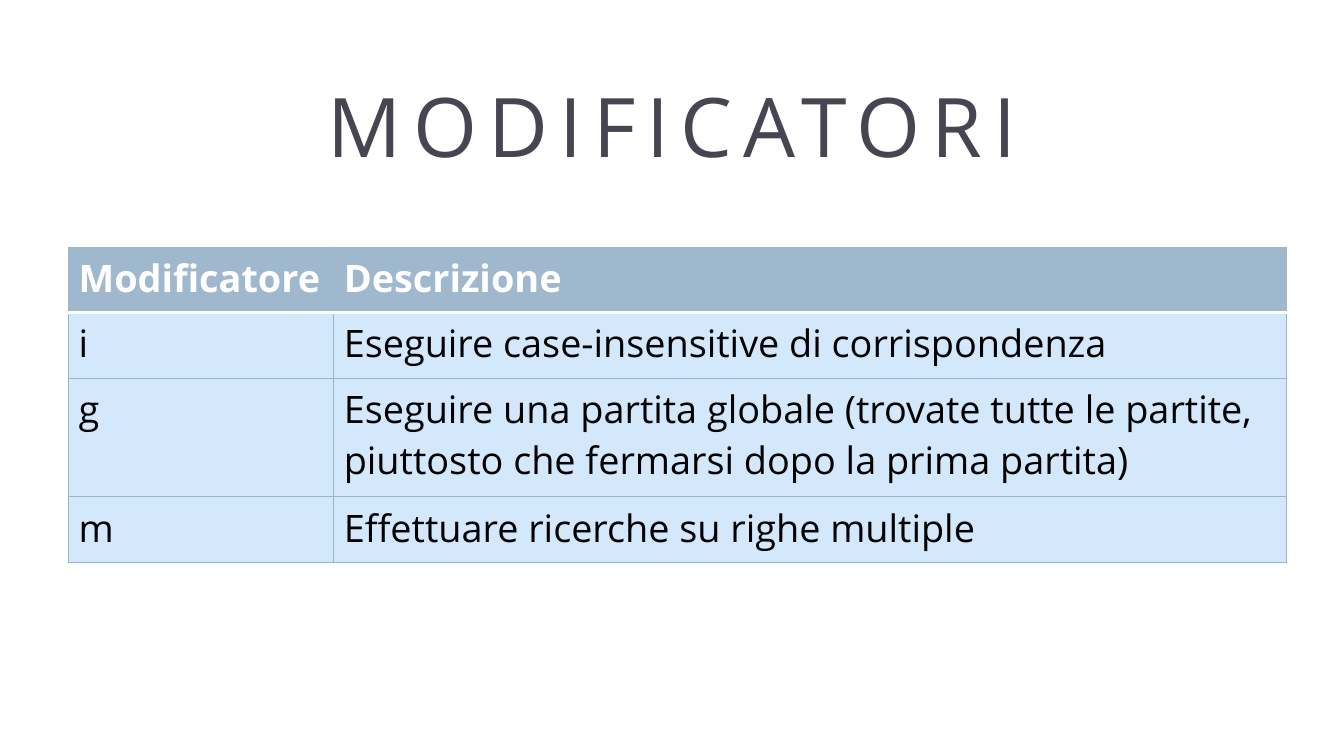
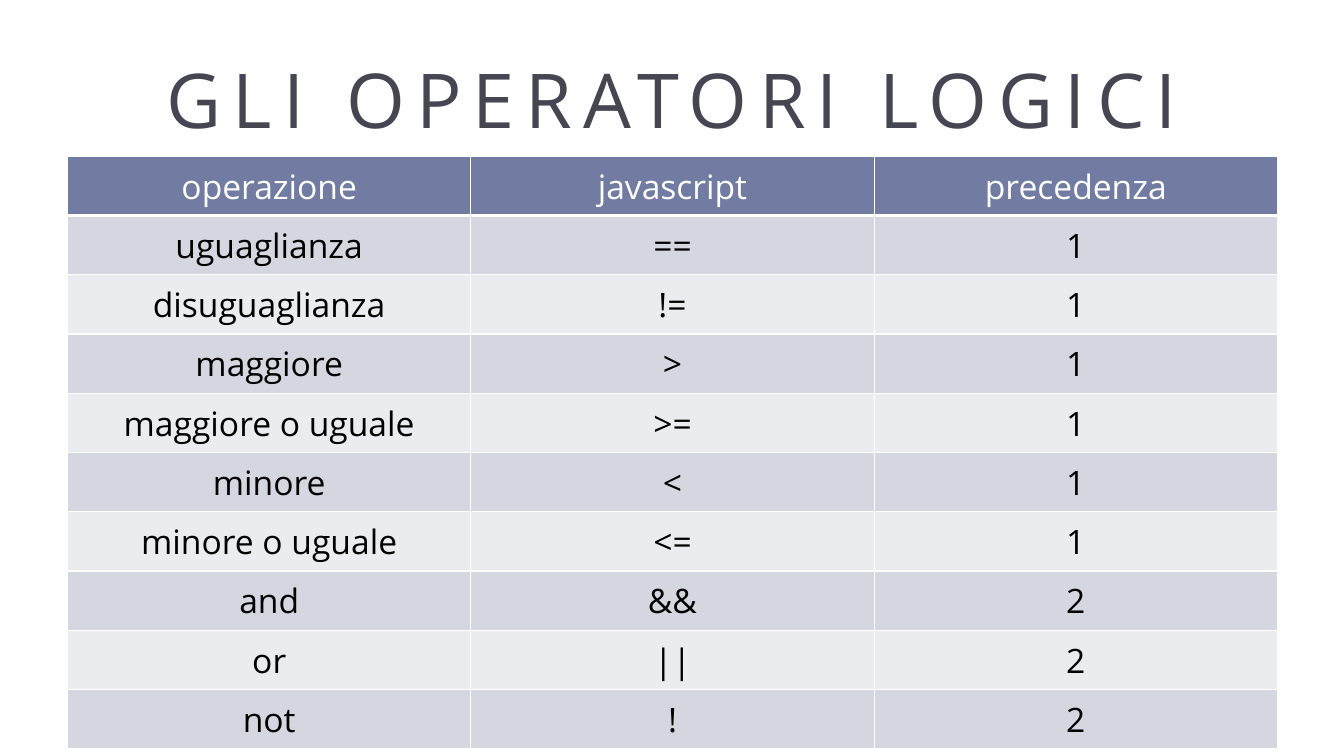
"""Build two slides, each with a spaced title over a table."""
from lxml.etree import SubElement
from pptx import Presentation
from pptx.dml.color import RGBColor
from pptx.enum.text import MSO_ANCHOR, PP_ALIGN
from pptx.oxml.ns import qn
from pptx.util import Inches, Pt

FONT = "Open Sans"
INK, WHITE, BLACK = "464653", "FFFFFF", "000000"


def style_font(p, size, color, bold=False):
    p.font.name = FONT
    p.font.size = Pt(size)
    p.font.bold = bold
    p.font.color.rgb = RGBColor.from_string(color)


def add_border(cell, side, color, width):
    ln = SubElement(cell._tc.get_or_add_tcPr(), qn(f"a:ln{side}"), w=str(Pt(width)))
    SubElement(SubElement(ln, qn("a:solidFill")), qn("a:srgbClr"), val=color)


slides = [
    dict(
        title="MODIFICATORI", title_top=0.61, title_size=58.7,
        left=0.68, top=2.45, cols=[2.63, 9.45], heights=[0.65, 0.65, 1.18, 0.65],
        size=27, align=PP_ALIGN.LEFT, bold_header=True, margin_x=0.1, margin_top=0.05,
        header="9FB8CD", bands=["D4E8FC"], border=("9AB4CA", 0.75), rule=(WHITE, 2),
        rows=[
            ("Modificatore", "Descrizione"),
            ("i", "Eseguire case-insensitive di corrispondenza"),
            ("g", "Eseguire una partita globale (trovate tutte le partite, "
                  "piuttosto che fermarsi dopo la prima partita)"),
            ("m", "Effettuare ricerche su righe multiple"),
        ],
    ),
    dict(
        title="GLI OPERATORI LOGICI", title_top=0.35, title_size=54,
        left=0.67, top=1.55, cols=[4] * 3, heights=[5.88 / 10] * 10,
        size=24, align=PP_ALIGN.CENTER, bold_header=False, margin_x=0.13, margin_top=0.07,
        header="727CA3", bands=["D5D7E0", "EBECF0"], border=(WHITE, 1), rule=(WHITE, 3),
        rows=[
            ("operazione", "javascript", "precedenza"),
            ("uguaglianza", "==", "1"),
            ("disuguaglianza", "!=", "1"),
            ("maggiore", ">", "1"),
            ("maggiore o uguale", ">=", "1"),
            ("minore", "<", "1"),
            ("minore o uguale", "<=", "1"),
            ("and", "&&", "2"),
            ("or", "||", "2"),
            ("not", "!", "2"),
        ],
    ),
]

prs = Presentation()
prs.slide_width, prs.slide_height = Inches(13.33), Inches(7.5)

for spec_ in slides:
    s = prs.slides.add_slide(prs.slide_layouts[6])

    sp = s.shapes.add_textbox(Inches(0.67), Inches(spec_["title_top"]), Inches(12), Inches(1.25))
    tf = sp.text_frame
    tf.word_wrap = True
    tf.vertical_anchor = MSO_ANCHOR.MIDDLE
    p = tf.paragraphs[0]
    p.alignment = PP_ALIGN.CENTER
    r = p.add_run()
    r.text = spec_["title"]
    style_font(p, spec_["title_size"], INK)
    r.font._element.set("spc", "800")

    rows, cols, heights = spec_["rows"], spec_["cols"], spec_["heights"]
    table = s.shapes.add_table(
        len(rows), len(cols), Inches(spec_["left"]), Inches(spec_["top"]),
        Inches(sum(cols)), Inches(sum(heights))).table
    table.horz_banding = False
    for column, width in zip(table.columns, cols):
        column.width = Inches(width)

    for i, (row, height, texts) in enumerate(zip(table.rows, heights, rows)):
        row.height = Inches(height)
        is_header = i == 0
        fill = spec_["header"] if is_header else spec_["bands"][(i - 1) % len(spec_["bands"])]
        top_border = spec_["rule"] if i == 1 else spec_["border"]
        bottom_border = spec_["rule"] if is_header else spec_["border"]
        for cell, text in zip(row.cells, texts):
            cell.margin_left = cell.margin_right = Inches(spec_["margin_x"])
            cell.margin_top = Inches(spec_["margin_top"])
            cell.margin_bottom = Inches(0.05)
            cell.text = text
            p = cell.text_frame.paragraphs[0]
            p.alignment = spec_["align"]
            style_font(p, spec_["size"], WHITE if is_header else BLACK,
                       is_header and spec_["bold_header"])
            add_border(cell, "L", *spec_["border"])
            add_border(cell, "R", *spec_["border"])
            add_border(cell, "T", *top_border)
            add_border(cell, "B", *bottom_border)
            cell.fill.solid()
            cell.fill.fore_color.rgb = RGBColor.from_string(fill)

prs.save("out.pptx")
